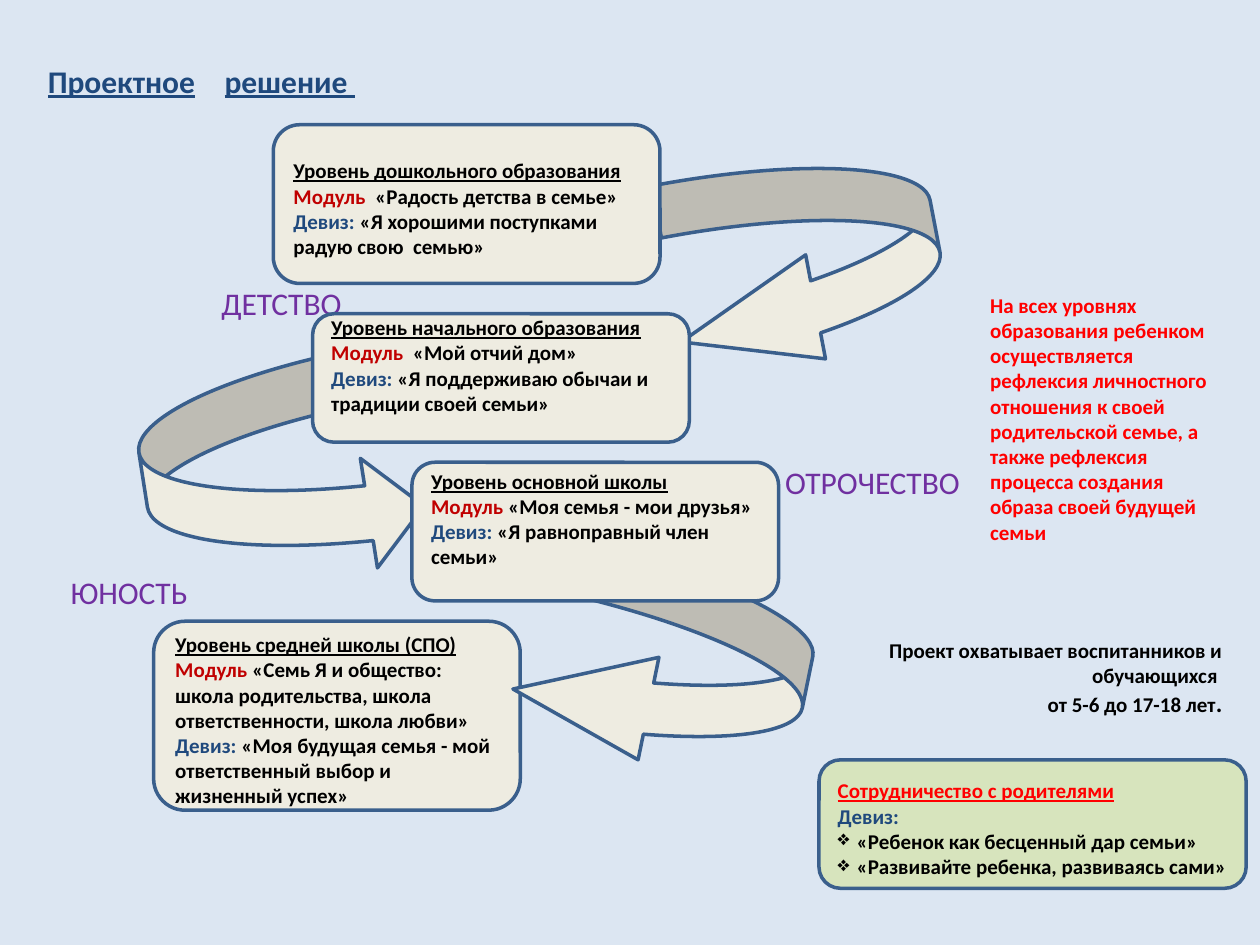
from lxml import etree
from pptx import Presentation
from pptx.dml.color import RGBColor
from pptx.enum.shapes import MSO_SHAPE as SHAPE
from pptx.enum.text import MSO_ANCHOR as ANCHOR, PP_ALIGN as ALIGN
from pptx.oxml.ns import qn
from pptx.util import Pt

BACK, CREAM, GREEN, EDGE = "DCE6F2", "EEECE1", "D7E4BD", "3A5F8C"
BLACK, NAVY, DARK_RED, RED, PURPLE = "000000", "1F497D", "C00000", "FF0000", "7030A0"
LINE_12, LINE_8 = 14.65, 9.77  # line heights of 12 and 8 pt text


def rgb(color):
    return RGBColor.from_string(color)


class Deck:
    font = "Calibri"

    def __init__(self, width, height):
        self.prs = Presentation()
        self.prs.slide_width, self.prs.slide_height = Pt(width), Pt(height)
        self.s = self.prs.slides.add_slide(self.prs.slide_layouts[6])
        fill = self.s.background.fill
        fill.solid()
        fill.fore_color.rgb = rgb(BACK)

    def shape(self, kind, at, fill, line, rotation=0, adjust=()):
        sp = self.s.shapes.add_shape(kind, *map(Pt, at))
        sp.shadow.inherit = False
        sp.fill.solid()
        sp.fill.fore_color.rgb = rgb(fill)
        sp.line.color.rgb = rgb(line)
        sp.line.width = Pt(2)
        sp.rotation = rotation
        for i, value in enumerate(adjust):
            sp.adjustments[i] = value
        return sp

    def frame(self, sp, left=7.2, top=3.6, right=7.2, bottom=3.6, anchor=ANCHOR.MIDDLE):
        tf = sp.text_frame
        tf.word_wrap = True
        tf.vertical_anchor = anchor
        tf.margin_left, tf.margin_top = Pt(left), Pt(top)
        tf.margin_right, tf.margin_bottom = Pt(right), Pt(bottom)
        return tf

    def add_runs(self, tf, paragraphs, size=12, bold=True, align=ALIGN.LEFT):
        """Each paragraph is a list of (text, colour, underline, size) runs; the last two are optional."""
        for i, runs in enumerate(paragraphs):
            p = tf.add_paragraph() if i else tf.paragraphs[0]
            p.alignment = align
            for text, color, *extra in runs:
                r = p.add_run()
                r.text = text
                r.font.name, r.font.bold = self.font, bold
                r.font.color.rgb = rgb(color)
                r.font.underline = bool(extra and extra[0])
                r.font.size = Pt(extra[1] if len(extra) > 1 else size)

    def card(self, at, paragraphs, above=0, below=0, fill=CREAM, right=7.2):
        sp = self.shape(SHAPE.ROUNDED_RECTANGLE, at, fill, EDGE)
        tf = self.frame(sp, top=3.6 + above, bottom=3.6 + below, right=right)
        self.add_runs(tf, paragraphs)
        return tf

    def level(self, at, title, module, motto, above=0, below=LINE_12):
        self.card(at, [[(title, BLACK, True)],
                       [("Модуль ", DARK_RED), (module, BLACK)],
                       [("Девиз: ", NAVY), (motto, BLACK)]], above, below)

    def arrow(self, kind, at, rotation, adjust=()):
        self.shape(kind, at, CREAM, EDGE, rotation, adjust)

    def panel(self, at, text, color, size=18, bold=False, align=ALIGN.CENTER, left=7.2):
        sp = self.shape(SHAPE.RECTANGLE, at, BACK, BACK)
        self.add_runs(self.frame(sp, left=left), [[(text, color)]], size, bold, align)

    def text(self, at, paragraphs, size=12, align=ALIGN.LEFT):
        tf = self.frame(self.s.shapes.add_textbox(*map(Pt, at)), anchor=ANCHOR.TOP)
        self.add_runs(tf, paragraphs, size, align=align)
        return tf

    def bullet(self, p, indent):
        pPr = p._p.get_or_add_pPr()
        pPr.set("marL", str(Pt(indent)))
        pPr.set("indent", str(-Pt(indent)))
        etree.SubElement(pPr, qn("a:buChar")).set("char", "❖")

    def tab_stop(self, p, position):
        tabs = etree.SubElement(p._p.get_or_add_pPr(), qn("a:tabLst"))
        tab = etree.SubElement(tabs, qn("a:tab"))
        tab.set("pos", str(Pt(position)))
        tab.set("algn", "l")


def main():
    d = Deck(720, 540)

    # Last level, behind its arrow
    d.level((87.8, 355, 209.5, 108), "Уровень средней школы (СПО)",
            "«Семь Я и общество: школа родительства, школа ответственности, школа любви»",
            "«Моя будущая семья - мой ответственный выбор и жизненный успех»",
            LINE_12, LINE_8)

    # Curved arrows from level to level
    left_bend = (0.25, 0.5, 0.654)
    d.arrow(SHAPE.CURVED_LEFT_ARROW, (382.3, 90.7, 154.8, 121), 349.2, left_bend)
    d.arrow(SHAPE.CURVED_RIGHT_ARROW, (82.1, 206.6, 156.2, 126.7), 351.1)
    d.arrow(SHAPE.CURVED_LEFT_ARROW, (297.4, 321.1, 164.2, 119.5), 11.5, left_bend)

    # Levels and the names of the ages
    d.panel((59.8, 162, 187.2, 22.3), "ДЕТСТВО", PURPLE, left=22)
    d.level((156.2, 71.3, 221, 90.7), "Уровень дошкольного образования",
            " «Радость детства в семье»", "«Я хорошими поступками радую свою  семью»",
            LINE_12, LINE_8)
    d.level((178.6, 179.3, 215.3, 73.4), "Уровень начального образования",
            " «Мой отчий дом»", "«Я поддерживаю обычаи и традиции своей семьи»")
    d.panel((439.2, 264.2, 118.8, 22.3), "ОТРОЧЕСТВО", PURPLE)
    d.level((235.4, 264.2, 209.5, 79.2), "Уровень основной школы",
            "«Моя семья - мои друзья»", "«Я равноправный член семьи»")

    # Notes on the right
    d.panel((558.7, 111.6, 141.8, 254.9),
            "На всех уровнях образования ребенком осуществляется рефлексия личностного "
            "отношения к своей родительской семье, а также рефлексия процесса создания "
            "образа своей будущей семьи", RED, 12, True, ALIGN.LEFT)
    d.panel((14.4, 326.9, 118.8, 22.3), "ЮНОСТЬ", PURPLE)
    d.text((484.6, 360.7, 221, 53.3),
           [[("Проект охватывает воспитанников и обучающихся ", BLACK)],
            [("от 5-6 до 17-18 лет", BLACK), (".", BLACK, False, 14)]], align=ALIGN.RIGHT)

    # Title
    tf = d.text((20.2, 31.7, 190.8, 28.8), [[("Проектное\tрешение ", NAVY, True)]], 18)
    d.tab_stop(tf.paragraphs[0], 101)

    # Work with parents
    tf = d.card((468, 434.2, 244.1, 73.4),
                [[("Сотрудничество с родителями", RED, True)],
                 [("Девиз:", NAVY)],
                 [("«Ребенок как бесценный дар семьи»", BLACK)],
                 [("«Развивайте ребенка, развиваясь сами»", BLACK)]],
                LINE_12, LINE_8, GREEN, right=4)
    for p in tf.paragraphs[2:]:
        d.bullet(p, 10.8)

    d.prs.save("out.pptx")


if __name__ == "__main__":
    main()
